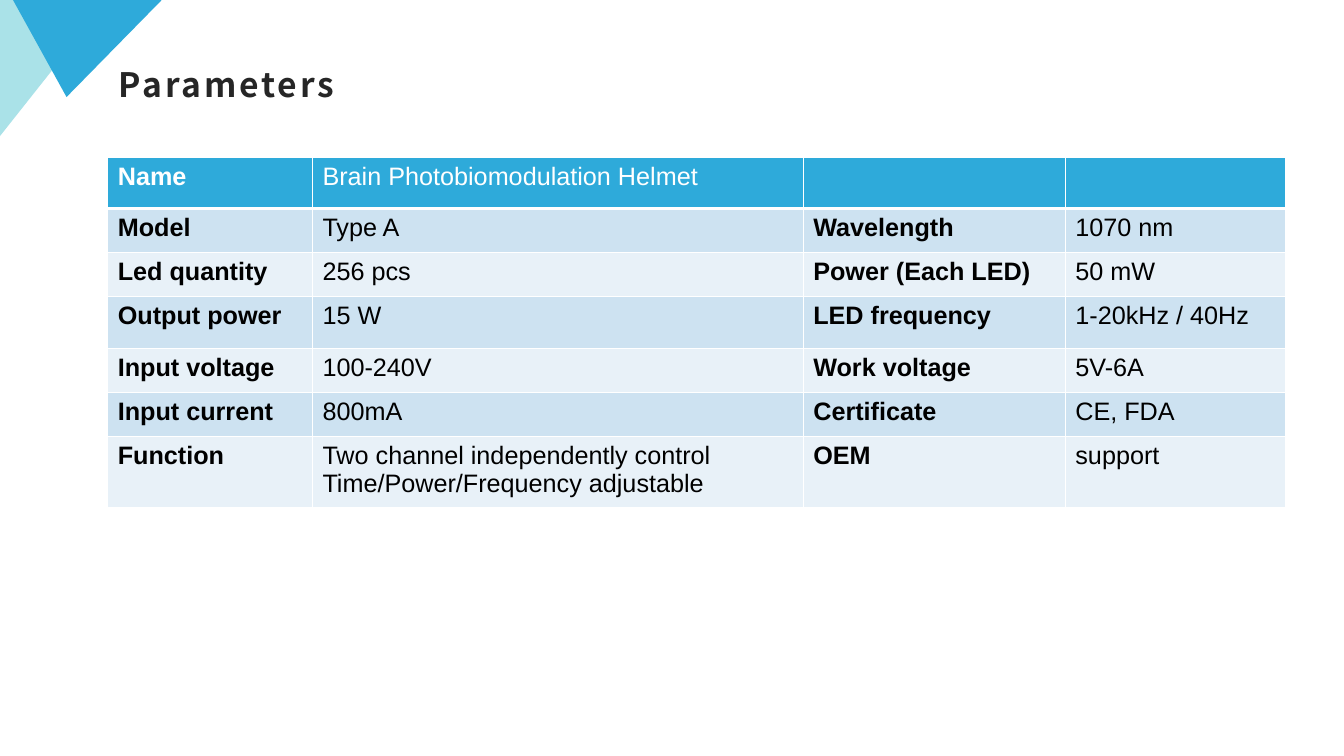
from dataclasses import dataclass

from lxml import etree
from pptx import Presentation
from pptx.dml.color import RGBColor
from pptx.enum.shapes import MSO_SHAPE
from pptx.enum.text import MSO_ANCHOR
from pptx.oxml.ns import qn
from pptx.util import Pt

RIGHT = MSO_SHAPE.RIGHT_TRIANGLE
PEAK = MSO_SHAPE.ISOSCELES_TRIANGLE
MIDDLE = MSO_ANCHOR.MIDDLE

BLUE, MINT, WHITE, BLACK, DARK = "2EAADA", "AAE2E8", "FFFFFF", "000000", "262626"
BANDS = ("CDE2F1", "E8F1F8")

COLS = (146.2, 350.6, 187.2, 157)
HIGH = (36.7, 31.5, 31.5, 37, 31.5, 31.5, 47)
ROWS = (
    ("Name", "Brain Photobiomodulation Helmet", "", ""),
    ("Model", "Type A", "Wavelength", "1070 nm"),
    ("Led quantity", "256 pcs", "Power (Each LED)", "50 mW"),
    ("Output power", "15 W", "LED frequency", "1-20kHz / 40Hz"),
    ("Input voltage", "100-240V", "Work voltage", "5V-6A"),
    ("Input current", "800mA", "Certificate", "CE, FDA"),
    ("Function", "Two channel independently control\nTime/Power/Frequency adjustable",
     "OEM", "support"),
)


@dataclass
class Corner:
    kind: int
    box: tuple
    color: str
    flip: bool = False
    peak: float | None = None


CORNERS = (
    Corner(RIGHT, (0, 0, 77, 97.2), MINT, flip=True),
    Corner(PEAK, (8.9, -0.7, 107.3, 70), BLUE, peak=0.64),
)


def rgb(code: str) -> RGBColor:
    return RGBColor.from_string(code)


def style(font, color: str, **form) -> None:
    for key, value in form.items():
        setattr(font, key, value)
    font.color.rgb = rgb(color)


def draw_corner(slide, part: Corner) -> None:
    shape = slide.shapes.add_shape(part.kind, *map(Pt, part.box))
    shape.rotation = 180
    shape.shadow.inherit = False
    shape.fill.solid()
    shape.fill.fore_color.rgb = rgb(part.color)
    shape.line.fill.background()
    if part.flip:
        shape._element.spPr.xfrm.set("flipH", "1")
    if part.peak is not None:
        shape.adjustments[0] = part.peak


def draw_title(slide, text: str) -> None:
    box = slide.shapes.add_textbox(Pt(77), Pt(42.5), Pt(854.6), Pt(34.6))
    frame = box.text_frame
    form = dict(word_wrap=True, vertical_anchor=MIDDLE, margin_left=Pt(8),
                margin_right=Pt(6), margin_top=Pt(3), margin_bottom=Pt(3))
    for key, value in form.items():
        setattr(frame, key, value)
    run = frame.paragraphs[0].add_run()
    run.text = text
    style(run.font, DARK, name="Noto Sans CJK SC", size=Pt(24), bold=True)
    run.font._element.set("spc", "200")


def add_edges(cell, widths: dict[str, float]) -> None:
    props = cell._tc.get_or_add_tcPr()
    for side, width in widths.items():
        line = etree.SubElement(props, qn(f"a:ln{side}"), w=str(Pt(width)))
        fill = etree.SubElement(line, qn("a:solidFill"))
        etree.SubElement(fill, qn("a:srgbClr"), val=WHITE)


def draw_table(slide) -> None:
    area = map(Pt, (77, 112.3, sum(COLS), sum(HIGH)))
    table = slide.shapes.add_table(len(ROWS), len(COLS), *area).table
    table.horz_banding = False
    for col, width in zip(table.columns, COLS):
        col.width = Pt(width)
    for r, texts in enumerate(ROWS):
        table.rows[r].height = Pt(HIGH[r])
        back = BANDS[(r - 1) % 2] if r else BLUE
        for c, text in enumerate(texts):
            cell = table.cell(r, c)
            # A thick rule parts the header from the body
            add_edges(cell, {"L": 1, "R": 1, "T": 3 if r == 1 else 1,
                             "B": 1 if r else 3})
            cell.fill.solid()
            cell.fill.fore_color.rgb = rgb(back)
            cell.text = text
            for para in cell.text_frame.paragraphs:
                for run in para.runs:
                    style(run.font, BLACK if r else WHITE, name="Arial",
                          size=Pt(18), bold=c % 2 == 0)


def main() -> None:
    deck = Presentation()
    deck.slide_width, deck.slide_height = Pt(960), Pt(540)
    slide = deck.slides.add_slide(deck.slide_layouts[6])
    # Corner triangles
    for part in CORNERS:
        draw_corner(slide, part)
    # Heading and parameter table
    draw_title(slide, "Parameters")
    draw_table(slide)
    deck.save("out.pptx")


if __name__ == "__main__":
    main()
